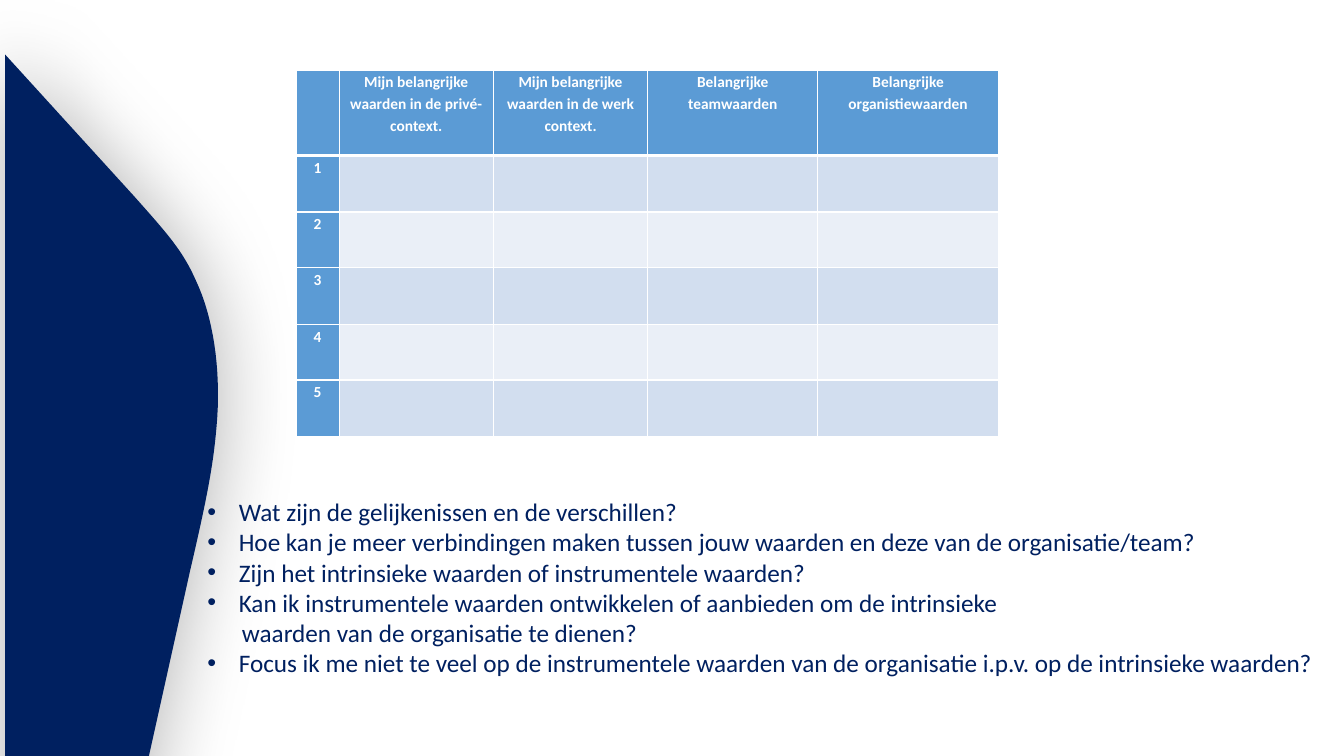
from pptx import Presentation
from pptx.dml.color import RGBColor
from pptx.enum.text import MSO_AUTO_SIZE, PP_ALIGN
from pptx.oxml import parse_xml
from pptx.oxml.ns import nsdecls
from pptx.util import Pt

PX = 9525
HUE = {"navy": "002060", "head": "5B9BD5", "odd": "D2DEEF",
       "even": "EAEFF7", "white": "FFFFFF", "shade": "000000"}


def put(para, text, size, hue, bold=False):
    run = para.add_run()
    run.text = text
    run.font.name = "Calibri"
    run.font.size = Pt(size)
    run.font.bold = bold
    run.font.color.rgb = RGBColor.from_string(HUE[hue])


def edge(cell, side, width):
    cell._tc.get_or_add_tcPr().append(parse_xml(
        f'<a:{side} {nsdecls("a")} w="{Pt(width)}"><a:solidFill>'
        f'<a:srgbClr val="{HUE["white"]}"/></a:solidFill></a:{side}>'))


deck = Presentation()
deck.slide_width, deck.slide_height = 1280 * PX, 720 * PX
slide = deck.slides.add_slide(deck.slide_layouts[6])
shapes = slide.shapes

# Navy side panel: straight edges and three curves
curves = [[(181, 544), (197, 475), (204, 441), (207, 397)],
          [(207, 397), (210, 350), (203, 302), (187, 268)],
          [(187, 268), (174, 238), (158, 221), (127, 186)]]
STEPS = 16
points = [(127, 787), (181, 544)]
for a, b, c, d in curves:
    for step in range(1, STEPS + 1):
        t = step / STEPS
        u = 1 - t
        points.append(tuple(
            u**3 * a[i] + 3 * u * u * t * b[i] + 3 * u * t * t * c[i] + t**3 * d[i]
            for i in (0, 1)))
points.append((5, 52))
pen = shapes.build_freeform(5 * PX, 787 * PX, scale=1.0)
pen.add_line_segments([(round(x * PX), round(y * PX)) for x, y in points], close=True)
panel = pen.convert_to_shape()
panel.fill.solid()
panel.fill.fore_color.rgb = RGBColor.from_string(HUE["navy"])
panel.line.fill.background()
panel.element.spPr.append(parse_xml(
    f'<a:effectLst {nsdecls("a")}><a:outerShdw blurRad="{Pt(60)}" dist="0" '
    f'dir="5400000" rotWithShape="0"><a:srgbClr val="{HUE["shade"]}">'
    '<a:alpha val="31000"/></a:srgbClr></a:outerShdw></a:effectLst>'))

# Table of values
heads = ["", "Mijn belangrijke waarden in de privé-context.",
         "Mijn belangrijke waarden in de werk context.",
         "Belangrijke teamwaarden", "Belangrijke organistiewaarden"]
wides = [41, 147, 147, 162, 172]
talls = [81, 54, 53, 54, 53, 54]
table = shapes.add_table(len(talls), len(wides), 282 * PX, 67 * PX,
                         sum(wides) * PX, sum(talls) * PX).table
for col, wide in zip(table.columns, wides):
    col.width = wide * PX
for r, tall in enumerate(talls):
    table.rows[r].height = tall * PX
    for c, head in enumerate(heads):
        cell = table.cell(r, c)
        text = head if r == 0 else str(r) if c == 0 else ""
        if text:
            cell.margin_left = cell.margin_right = 7 * PX
            cell.margin_top = cell.margin_bottom = 0
            para = cell.text_frame.paragraphs[0]
            para.alignment = PP_ALIGN.CENTER
            para.line_spacing = 1.15
            put(para, text, 11, "white", True)
        edge(cell, "lnL", 1)
        edge(cell, "lnR", 1)
        edge(cell, "lnT", 3 if r == 1 else 1)
        edge(cell, "lnB", 3 if r == 0 else 1)
        hue = "head" if r == 0 or c == 0 else "odd" if r % 2 else "even"
        cell.fill.solid()
        cell.fill.fore_color.rgb = RGBColor.from_string(HUE[hue])

# Questions: text and whether it has a bullet
lines = [
    ("Wat zijn de gelijkenissen en de verschillen?", True),
    ("Hoe kan je meer verbindingen maken tussen jouw waarden en deze van de organisatie/team?", True),
    ("Zijn het intrinsieke waarden of instrumentele waarden?", True),
    ("Kan ik instrumentele waarden ontwikkelen of aanbieden om de intrinsieke", True),
    ("waarden van de organisatie te dienen?", False),
    ("Focus ik me niet te veel op de instrumentele waarden van de organisatie "
     "i.p.v. op de intrinsieke waarden?", True),
]
frame = shapes.add_textbox(188 * PX, 468 * PX, 1079 * PX, 184 * PX).text_frame
frame.word_wrap = False
frame.auto_size = MSO_AUTO_SIZE.SHAPE_TO_FIT_TEXT
for n, (text, mark) in enumerate(lines):
    para = frame.add_paragraph() if n else frame.paragraphs[0]
    props = para._p.get_or_add_pPr()
    props.set("marL", str((30 if mark else 33) * PX))
    props.set("indent", str(-30 * PX if mark else 0))
    if mark:
        props.append(parse_xml(f'<a:buFont {nsdecls("a")} typeface="Arial"/>'))
        props.append(parse_xml(f'<a:buChar {nsdecls("a")} char="•"/>'))
    put(para, text, 18, "navy")

deck.save("out.pptx")
